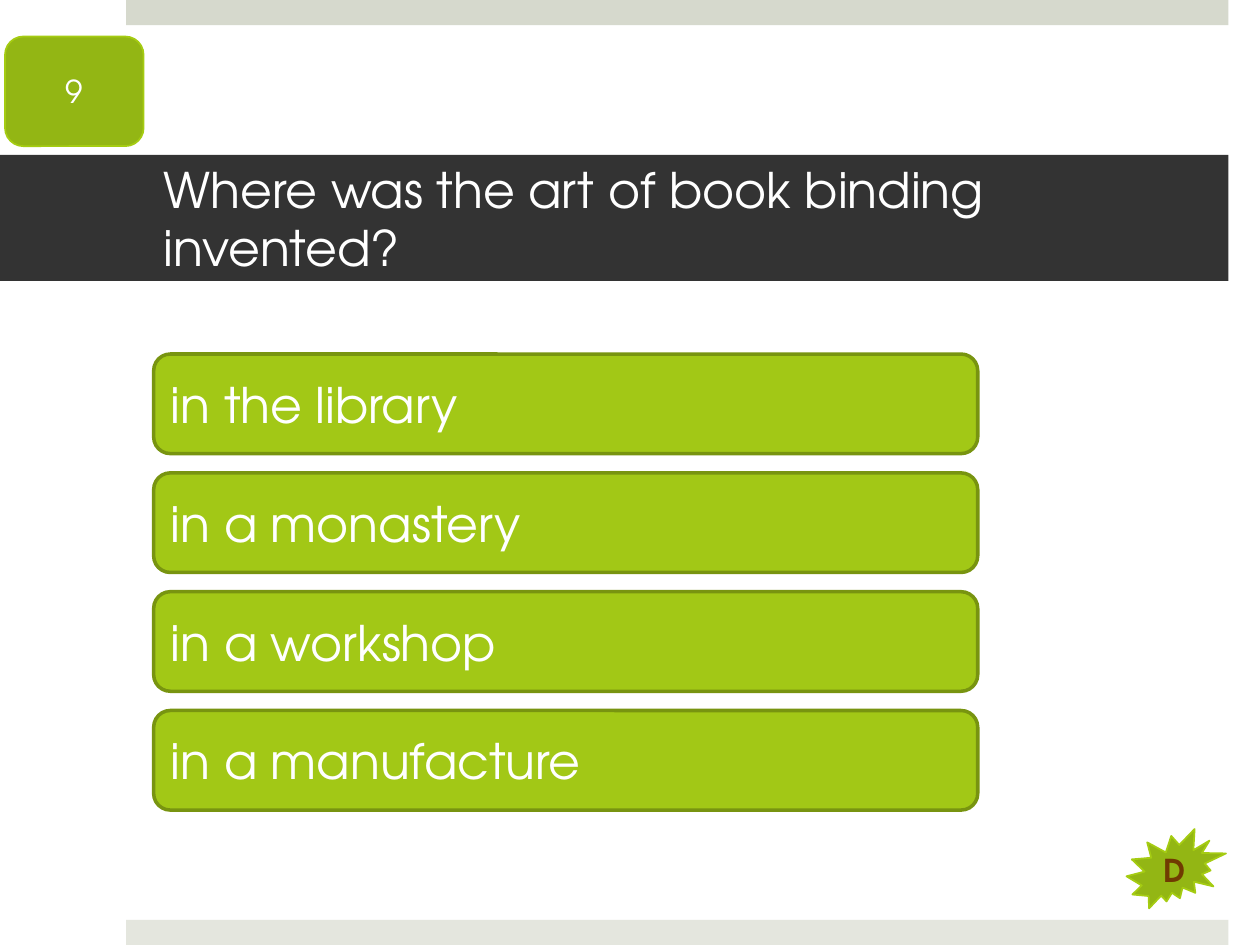
"""Build a quiz slide with a question, four answers and a key badge."""
from dataclasses import dataclass

from pptx import Presentation
from pptx.dml.color import RGBColor
from pptx.enum.shapes import MSO_SHAPE
from pptx.enum.text import MSO_ANCHOR, MSO_AUTO_SIZE, PP_ALIGN
from pptx.util import Inches, Pt

RECTANGLE = MSO_SHAPE.RECTANGLE
ROUNDED = MSO_SHAPE.ROUNDED_RECTANGLE
BURST = MSO_SHAPE.EXPLOSION2
MIDDLE = MSO_ANCHOR.MIDDLE
NO_FIT = MSO_AUTO_SIZE.NONE
LEFT = PP_ALIGN.LEFT
CENTER = PP_ALIGN.CENTER


@dataclass(frozen=True)
class Theme:
    font: str = "TeX Gyre Adventor"
    large: int = 28
    small: int = 18
    white: str = "FFFFFF"
    band: str = "333333"
    top_bar: str = "D6D9CD"
    bottom_bar: str = "E4E6DE"
    answer: str = "A2C816"
    answer_edge: str = "789410"
    badge: str = "93B614"
    badge_edge: str = "A5CC12"
    key: str = "703B01"


THEME = Theme()


def add_block(kind, box, fill, edge=None, edge_width=0):
    block = slide.shapes.add_shape(kind, *[Inches(length) for length in box])
    block.shadow.inherit = False
    block.fill.solid()
    block.fill.fore_color.rgb = RGBColor.from_string(fill)
    if edge:
        block.line.color.rgb = RGBColor.from_string(edge)
        block.line.width = Pt(edge_width)
    else:
        block.line.fill.background()
    return block


def write(block, words, size, align, color=THEME.white, bold=False):
    block.text_frame.vertical_anchor = MIDDLE
    block.text_frame.word_wrap = True
    paragraph = block.text_frame.paragraphs[0]
    paragraph.alignment = align
    run = paragraph.add_run()
    run.text = words
    run.font.name = THEME.font
    run.font.size = Pt(size)
    run.font.bold = bold
    run.font.color.rgb = RGBColor.from_string(color)
    return paragraph


prs = Presentation()
prs.slide_width = Inches(10)
prs.slide_height = Inches(7.5)
slide = prs.slides.add_slide(prs.slide_layouts[5])

add_block(RECTANGLE, (1, 0, 8.75, 0.2), THEME.top_bar)
add_block(RECTANGLE, (1, 7.3, 8.75, 0.2), THEME.bottom_bar)

question = slide.shapes.title
question.left, question.top = Inches(0), Inches(1.23)
question.width, question.height = Inches(9.75), Inches(1)
question.fill.solid()
question.fill.fore_color.rgb = RGBColor.from_string(THEME.band)
question.text_frame.auto_size = NO_FIT
question.text_frame.margin_left = Inches(1.3)
question.text_frame.margin_right = Inches(0.3)
write(question, "Where was the art of book binding invented?", THEME.large, LEFT)

answers = ["in the library", "in a monastery", "in a workshop", "in a manufacture"]
for row, words in enumerate(answers):
    box = (1.22, 2.81 + row * 0.943, 6.54, 0.79)
    answer = add_block(ROUNDED, box, THEME.answer, THEME.answer_edge, 2)
    paragraph = write(answer, words, THEME.large, LEFT)
    indent = paragraph._p.get_or_add_pPr()
    indent.set("marL", str(Inches(0.38)))
    indent.set("indent", str(Inches(-0.38)))

number = add_block(ROUNDED, (0.04, 0.29, 1.1, 0.87), THEME.badge, THEME.badge_edge, 1)
write(number, "9", THEME.small, CENTER)

key = add_block(BURST, (8.94, 6.58, 0.79, 0.63), THEME.badge, THEME.badge_edge, 1)
write(key, "D", THEME.small, CENTER, THEME.key, bold=True)

prs.save("out.pptx")
